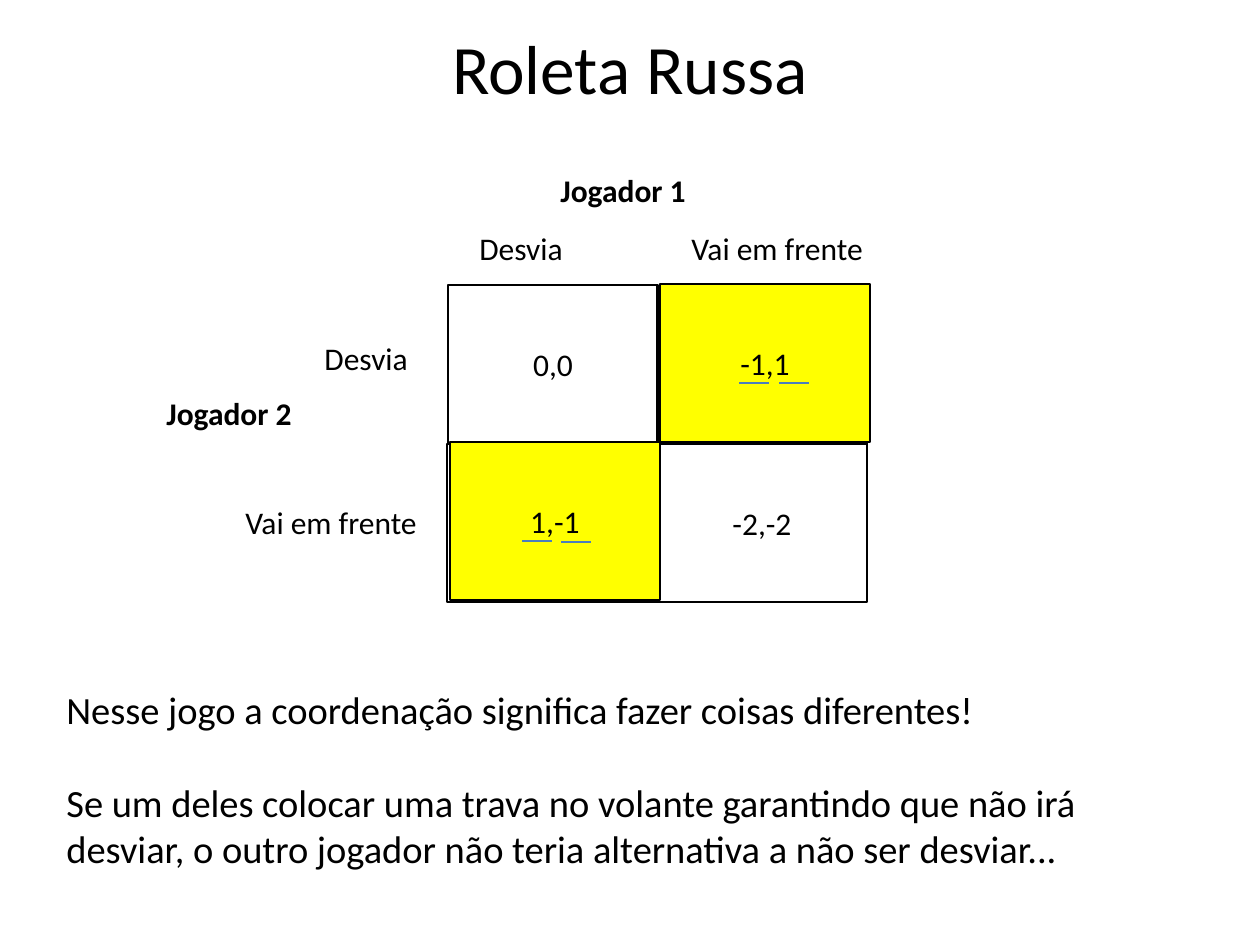
import pptx
import pptx.dml.color
import pptx.enum.shapes
import pptx.enum.text
import pptx.oxml.ns
import pptx.util
from lxml import etree

BLACK = pptx.dml.color.RGBColor(0x00, 0x00, 0x00)
YELLOW = pptx.dml.color.RGBColor(0xFF, 0xFF, 0x00)
BLUE = pptx.dml.color.RGBColor(0x4B, 0x7E, 0xBC)
ALIGN = pptx.enum.text.PP_ALIGN
ANCHOR = pptx.enum.text.MSO_ANCHOR

CELL_W, CELL_H = 210, 158


def px(n):
    return pptx.util.Emu(round(n * 914400 / 126))


class Slide:
    font = "Calibri"
    line_width = pptx.util.Pt(0.75)

    def __init__(self, prs):
        self.s = prs.slides.add_slide(prs.slide_layouts[6])

    def fill_text(self, tf, paragraphs, size, align, bold=False, gap=0):
        for i, text in enumerate(paragraphs):
            p = tf.paragraphs[0] if i == 0 else tf.add_paragraph()
            p.text = text
            p.alignment = align
            if i:
                p.space_before = pptx.util.Pt(gap)
            p.font.name = self.font
            p.font.size = pptx.util.Pt(size)
            p.font.bold = bold
            p.font.color.rgb = BLACK

    def title(self, text, x, y, w, h):
        tf = self.s.shapes.add_textbox(px(x), px(y), px(w), px(h)).text_frame
        tf.word_wrap = True
        tf.vertical_anchor = ANCHOR.MIDDLE
        self.fill_text(tf, [text], 39.6, ALIGN.CENTER)

    def text(self, paragraphs, x, y, w, h, size=18, bold=False, wrap=False, gap=0):
        tf = self.s.shapes.add_textbox(px(x), px(y), px(w), px(h)).text_frame
        tf.word_wrap = wrap
        tf.auto_size = pptx.enum.text.MSO_AUTO_SIZE.SHAPE_TO_FIT_TEXT
        self.fill_text(tf, paragraphs, size, ALIGN.LEFT, bold, gap)

    def cell(self, x, y, text="", fill=None):
        sp = self.s.shapes.add_shape(pptx.enum.shapes.MSO_SHAPE.RECTANGLE,
                                     px(x), px(y), px(CELL_W), px(CELL_H))
        sp.shadow.inherit = False
        if fill is None:
            sp.fill.background()
        else:
            sp.fill.solid()
            sp.fill.fore_color.rgb = fill
        sp.line.color.rgb = BLACK
        sp.line.width = self.line_width
        tf = sp.text_frame
        tf.word_wrap = False
        tf.vertical_anchor = ANCHOR.MIDDLE
        if text:
            self.fill_text(tf, [text], 18, ALIGN.CENTER)

    def underline(self, x, y, w=30):
        c = self.s.shapes.add_connector(pptx.enum.shapes.MSO_CONNECTOR.STRAIGHT,
                                        px(x), px(y), px(x + w), px(y))
        c.line.color.rgb = BLUE
        c.line.width = self.line_width
        etree.SubElement(c._element.spPr, pptx.oxml.ns.qn("a:effectLst"))


def main():
    prs = pptx.Presentation()
    prs.slide_width, prs.slide_height = px(1260), px(945)
    slide = Slide(prs)

    slide.title("Roleta Russa", 63, 18, 1134, 97)

    # Payoff matrix: plain cells, then the highlighted equilibria on top
    slide.cell(657, 286)
    slide.cell(657, 444, "-2,-2")
    slide.cell(447, 444)
    slide.cell(448, 285, "0,0")
    slide.cell(450, 442, "1,-1", YELLOW)
    slide.cell(660, 284, "-1,1", YELLOW)

    # Best-response underlines
    for x, y in [(522, 541), (561, 542), (739, 383), (779, 383)]:
        slide.underline(x, y)

    # Strategies
    for text, x, y, w in [("Desvia", 467, 223, 110), ("Vai em frente", 679, 223, 199),
                          ("Desvia", 312, 333, 110), ("Vai em frente", 233, 497, 199)]:
        slide.text([text], x, y, w, 50)

    # Players
    for text, x, y in [("Jogador 1", 548, 165), ("Jogador 2", 154, 388)]:
        slide.text([text], x, y, 152, 50, bold=True)

    # Comments, one line height apart
    slide.text(["Nesse jogo a coordenação significa fazer coisas diferentes!",
                "Se um deles colocar uma trava no volante garantindo que não irá "
                "desviar, o outro jogador não teria alternativa a não ser desviar..."],
               54, 680, 1142, 199, size=22, wrap=True, gap=26.8)

    prs.save("out.pptx")


if __name__ == "__main__":
    main()
